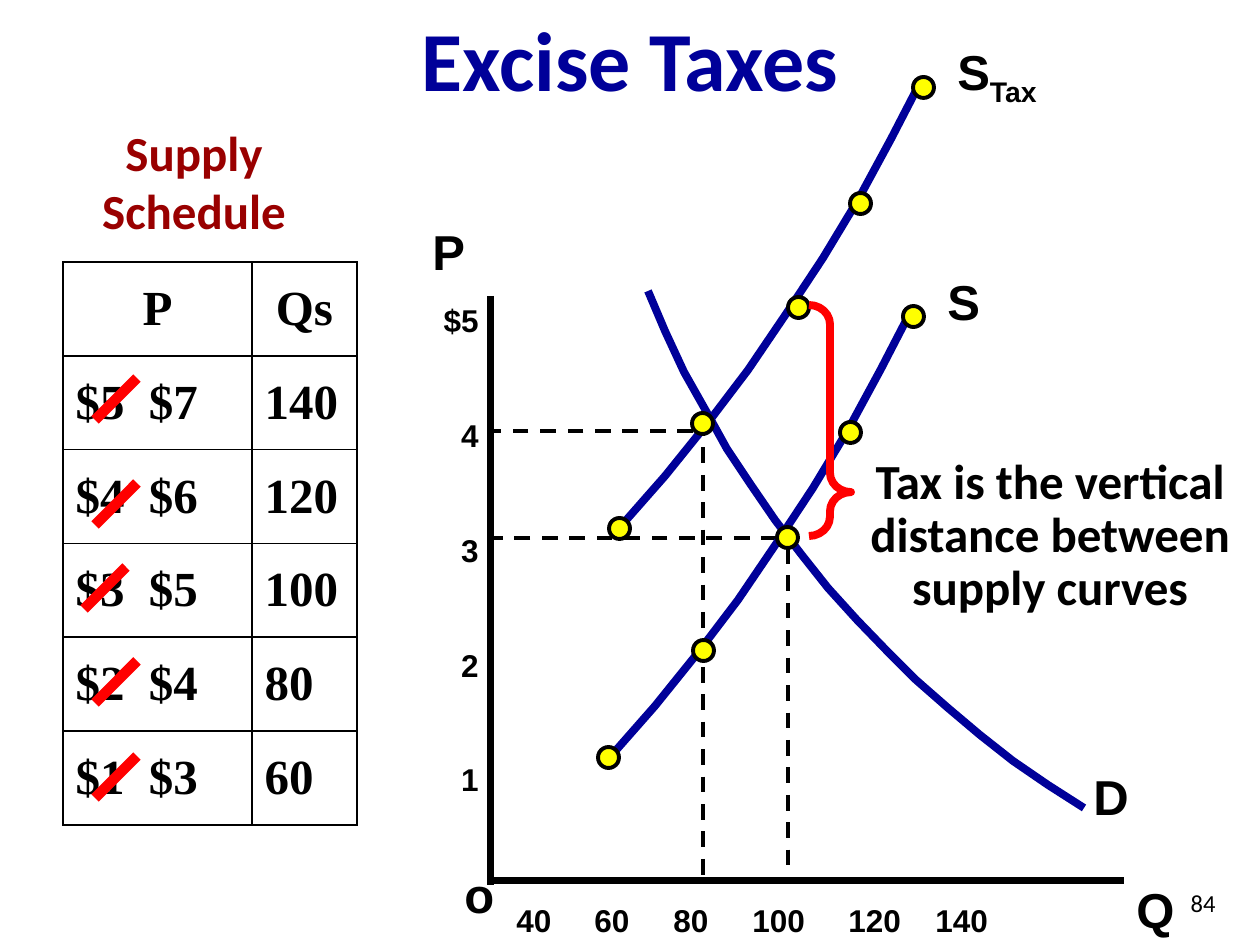
from dataclasses import dataclass

from lxml import etree
from pptx import Presentation
from pptx.dml.color import RGBColor
from pptx.enum import dml, shapes, text
from pptx.oxml import ns
from pptx.util import Emu, Pt


@dataclass(frozen=True)
class Theme:
    ink: str = "000000"
    curve: str = "000099"
    heading: str = "990000"
    accent: str = "FF0000"
    dot: str = "FFFF00"
    paper: str = "FFFFFF"
    sans: str = "Arial"
    display: str = "Calibri"
    serif: str = "Times New Roman"
    title_size: int = 48
    label_size: int = 28
    tick_size: int = 18
    number_size: int = 14


THEME = Theme()
LEFT, CENTER, RIGHT = (text.PP_ALIGN.LEFT, text.PP_ALIGN.CENTER, text.PP_ALIGN.RIGHT)

SUPPLY = [(611, 756), (655, 706), (697, 654), (738, 600), (776, 544),
          (813, 488), (848, 430), (881, 369), (912, 309)]
DEMAND = [(648, 291), (665, 331), (684, 372), (706, 411), (727, 449), (751, 485),
          (775, 520), (801, 554), (828, 588), (857, 620), (886, 650), (916, 680),
          (948, 708), (980, 735), (1013, 761), (1048, 785), (1084, 808)]
SUPPLY_DOTS = [(598, 747), (693, 640), (777, 527), (840, 422), (903, 306)]
TAX_DOTS = [(609, 518), (692, 413), (788, 297), (850, 193), (913, 77)]
TAX_SHIFT = (10, -230)
DOT = 21

SCHEDULE = [("P", "Qs"), ("$5  $7", "140"), ("$4  $6", "120"),
            ("$3  $5", "100"), ("$2  $4", "80"), ("$1  $3", "60")]
STRIKES = [(95, 420), (95, 525), (84, 609), (95, 703), (95, 798)]
STRIKE = 42


def px(n):
    return Emu(round(n * 914400 / 126))


def rgb(color):
    return RGBColor.from_string(color)


def write(paragraph, words, size, font, color=THEME.ink, bold=True):
    run = paragraph.add_run()
    run.text = words
    run.font.size = Pt(size)
    run.font.name = font
    run.font.bold = bold
    run.font.color.rgb = rgb(color)
    return run


def outline(line, color, width):
    line.color.rgb = rgb(color)
    line.width = Pt(width)


def add_line(slide, start, end, color, width, dashed=False):
    line = slide.shapes.add_connector(
        shapes.MSO_CONNECTOR.STRAIGHT, *map(px, start + end))
    outline(line.line, color, width)
    if dashed:
        line.line.dash_style = dml.MSO_LINE.DASH
    etree.SubElement(line._element.spPr, ns.qn("a:effectLst"))


def add_curve(slide, points):
    builder = slide.shapes.build_freeform(*points[0], scale=914400 / 126)
    builder.add_line_segments(points[1:], close=False)
    curve = builder.convert_to_shape()
    curve.shadow.inherit = False
    curve.fill.background()
    outline(curve.line, THEME.curve, 4.5)


def add_dots(slide, corners):
    for x, y in corners:
        dot = slide.shapes.add_shape(
            shapes.MSO_SHAPE.OVAL, px(x), px(y), px(DOT), px(DOT))
        dot.shadow.inherit = False
        dot.fill.solid()
        dot.fill.fore_color.rgb = rgb(THEME.dot)
        outline(dot.line, THEME.ink, 2.25)


def add_brace(slide, box):
    brace = slide.shapes.add_shape(shapes.MSO_SHAPE.RIGHT_BRACE, *map(px, box))
    brace.shadow.inherit = False
    brace.fill.background()
    brace.adjustments[0] = 0.46
    brace.adjustments[1] = 0.81
    outline(brace.line, THEME.accent, 4.5)


def add_text(slide, box, words, size=THEME.label_size, font=THEME.sans,
             color=THEME.ink, align=LEFT, bold=True, wrap=False):
    """Add a one-paragraph text box and return the paragraph."""
    frame = slide.shapes.add_textbox(*map(px, box)).text_frame
    frame.word_wrap = wrap
    paragraph = frame.paragraphs[0]
    paragraph.alignment = align
    write(paragraph, words, size, font, color, bold)
    return paragraph


def add_price_ticks(slide):
    frame = slide.shapes.add_textbox(px(431), px(295), px(60), px(505)).text_frame
    frame.word_wrap = False
    for i, price in enumerate(["$5", "4", "3", "2", "1"]):
        paragraph = frame.add_paragraph() if i else frame.paragraphs[0]
        paragraph.alignment = RIGHT
        paragraph.space_before = Pt(44 if i else 0)
        write(paragraph, price, THEME.tick_size, THEME.sans)


def add_quantity_ticks(slide):
    paragraph = add_text(slide, (504, 895, 624, 50),
                         "\t".join(["40", "60", "80", "100", "120", "140"]),
                         THEME.tick_size, wrap=True)
    stops = etree.SubElement(paragraph._p.get_or_add_pPr(), ns.qn("a:tabLst"))
    for offset in (78, 157, 236, 332, 419):
        etree.SubElement(stops, ns.qn("a:tab"), pos=str(px(offset)), algn="l")


def add_cell_borders(cell):
    properties = cell._tc.get_or_add_tcPr()
    for side in ("lnL", "lnR", "lnT", "lnB"):
        border = etree.SubElement(properties, ns.qn(f"a:{side}"), w=str(Pt(1)))
        fill = etree.SubElement(border, ns.qn("a:solidFill"))
        etree.SubElement(fill, ns.qn("a:srgbClr"), val=THEME.ink)


def add_schedule(slide):
    table = slide.shapes.add_table(
        len(SCHEDULE), 2, px(63), px(262), px(294), px(563)).table
    table.first_row = table.horz_banding = False
    table.columns[0].width, table.columns[1].width = px(189), px(105)
    for r, row in enumerate(SCHEDULE):
        for c, words in enumerate(row):
            cell = table.cell(r, c)
            add_cell_borders(cell)
            cell.fill.solid()
            cell.fill.fore_color.rgb = rgb(THEME.paper)
            cell.vertical_anchor = text.MSO_ANCHOR.MIDDLE
            paragraph = cell.text_frame.paragraphs[0]
            paragraph.alignment = LEFT if r else CENTER
            write(paragraph, words, THEME.label_size, THEME.serif)
    for x, y in STRIKES:
        add_line(slide, (x, y), (x + STRIKE, y - STRIKE), THEME.accent, 6)


def set_title(slide, words):
    title = slide.shapes.title
    title.left, title.top, title.width, title.height = map(px, (0, 21, 1260, 93))
    frame = title.text_frame
    frame.auto_size = text.MSO_AUTO_SIZE.NONE
    frame.vertical_anchor = text.MSO_ANCHOR.TOP
    paragraph = frame.paragraphs[0]
    paragraph.alignment = CENTER
    paragraph.line_spacing = 0.8
    write(paragraph, words, THEME.title_size, THEME.display, THEME.curve)


def add_graph(slide):
    for start, end in [((703, 420), (703, 882)), ((788, 548), (788, 873)),
                       ((777, 538), (494, 538)), ((693, 431), (494, 431))]:
        add_line(slide, start, end, THEME.ink, 2.25, dashed=True)
    add_line(slide, (491, 296), (491, 885), THEME.ink, 4)
    add_line(slide, (489, 881), (1124, 881), THEME.ink, 4)
    dx, dy = TAX_SHIFT
    for points in (DEMAND, SUPPLY, [(x + dx, y + dy) for x, y in SUPPLY]):
        add_curve(slide, points)
    add_dots(slide, SUPPLY_DOTS + TAX_DOTS)
    add_brace(slide, (809, 305, 42, 231))
    add_price_ticks(slide)
    add_quantity_ticks(slide)
    for words, x, y, width in [("P", 420, 215, 58), ("Q", 1124, 873, 63),
                               ("o", 452, 858, 55), ("D", 1081, 760, 60),
                               ("S", 935, 265, 58)]:
        add_text(slide, (x, y, width, 72), words)
    taxed_supply = add_text(slide, (945, 35, 116, 72), "S")
    subscript = write(taxed_supply, "Tax", THEME.label_size, THEME.sans)
    subscript._r.get_or_add_rPr().set("baseline", "-25000")


def main():
    deck = Presentation()
    deck.slide_width, deck.slide_height = px(1260), px(945)
    slide = deck.slides.add_slide(deck.slide_layouts[5])
    set_title(slide, "Excise Taxes")
    add_text(slide, (73, 116, 242, 130), "Supply Schedule", font=THEME.display,
             color=THEME.heading, align=CENTER, wrap=True)
    add_schedule(slide)
    add_graph(slide)
    note = add_text(slide, (840, 451, 420, 171),
                    "Tax is the vertical distance between supply curves",
                    font=THEME.display, align=CENTER, wrap=True)
    note.line_spacing = 0.9
    add_text(slide, (966, 882, 262, 63), "84", THEME.number_size, THEME.display,
             align=RIGHT, bold=False, wrap=True)
    deck.save("out.pptx")


if __name__ == "__main__":
    main()
